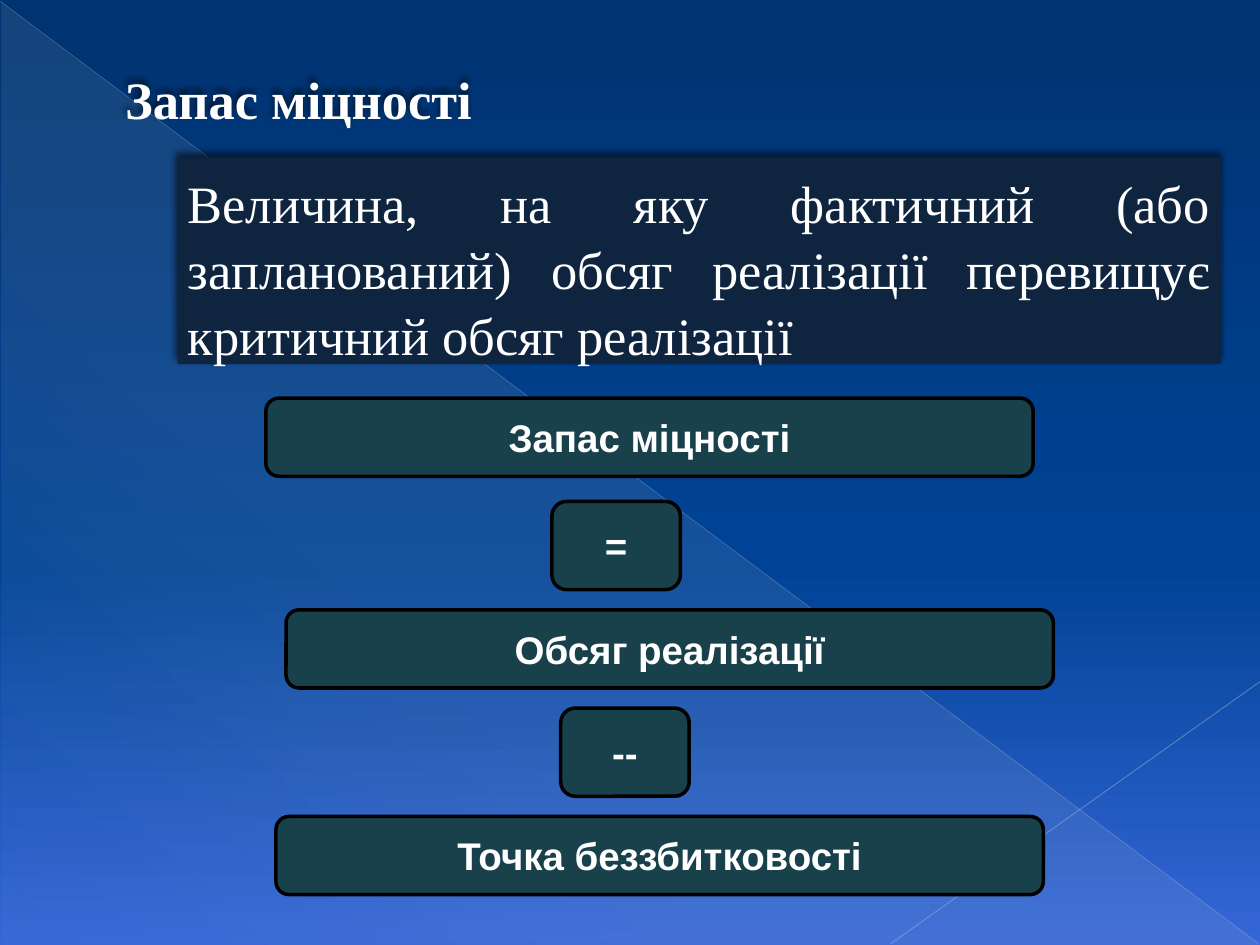
from lxml import etree
from pptx import Presentation
from pptx.dml.color import RGBColor
from pptx.enum.shapes import MSO_CONNECTOR, MSO_SHAPE
from pptx.enum.text import MSO_ANCHOR, PP_ALIGN
from pptx.oxml.ns import qn
from pptx.util import Inches, Pt

STRAIGHT = MSO_CONNECTOR.STRAIGHT
RECTANGLE = MSO_SHAPE.RECTANGLE
ROUNDED = MSO_SHAPE.ROUNDED_RECTANGLE
TRIANGLE = MSO_SHAPE.RIGHT_TRIANGLE
TOP, MIDDLE = MSO_ANCHOR.TOP, MSO_ANCHOR.MIDDLE
CENTER, JUSTIFY = PP_ALIGN.CENTER, PP_ALIGN.JUSTIFY

COLORS = {
    "sky_top": "003371",
    "sky_middle": "004396",
    "sky_bottom": "3566D7",
    "cream": "EEECE1",
    "long_line": "ADB6CE",
    "short_line": "B6BED3",
    "navy": "0F243E",
    "teal": "18414C",
    "black": "000000",
    "white": "FFFFFF",
}
SERIF = {"name": "Times New Roman", "size": Pt(30), "bold": False}
SERIF_BOLD = {**SERIF, "bold": True}
SANS_BOLD = {"name": "Arial", "size": Pt(22), "bold": True}


class SlideBuilder:
    """Holds the colours and the current slide, and draws each kind of element."""

    def __init__(self, slide, colors):
        self.slide = slide
        self.colors = colors

    def rgb(self, color):
        return RGBColor.from_string(self.colors[color])

    def add_color(self, parent, color, opacity):
        element = etree.SubElement(parent, qn("a:srgbClr"), val=self.colors[color])
        if opacity < 100:
            etree.SubElement(element, qn("a:alpha"), val=str(opacity * 1000))

    def gradient(self, fill, owner, stops, angle):
        fill.gradient()
        gradient = owner.find(".//" + qn("a:gradFill"))
        for child in list(gradient):
            gradient.remove(child)
        stop_list = etree.SubElement(gradient, qn("a:gsLst"))
        for position, color, opacity in stops:
            stop = etree.SubElement(stop_list, qn("a:gs"), pos=str(position * 1000))
            self.add_color(stop, color, opacity)
        etree.SubElement(gradient, qn("a:lin"), ang=str(angle * 60000), scaled="0")

    def background(self, stops, angle):
        self.gradient(self.slide.background.fill, self.slide.element, stops, angle)

    def shape(self, kind, box, fill=None, line=None):
        shape = self.slide.shapes.add_shape(kind, *map(Inches, box))
        shape.shadow.inherit = False
        if fill:
            shape.fill.solid()
            shape.fill.fore_color.rgb = self.rgb(fill)
        else:
            shape.fill.background()
        if line:
            shape.line.color.rgb = self.rgb(line)
            shape.line.width = Pt(2)
        else:
            shape.line.fill.background()
        return shape

    def triangle(self, box, stops, angle):
        shape = self.shape(TRIANGLE, box)
        self.gradient(shape.fill, shape.element, stops, angle)

    def line(self, start, end, color, width, opacity):
        points = map(Inches, (*start, *end))
        connector = self.slide.shapes.add_connector(STRAIGHT, *points)
        connector.line.width = Pt(width)
        connector.line.color.rgb = self.rgb(color)
        properties = connector.element.spPr
        element = properties.find(".//" + qn("a:srgbClr"))
        etree.SubElement(element, qn("a:alpha"), val=str(opacity * 1000))
        etree.SubElement(properties, qn("a:effectLst"))

    def shadow(self, shape):
        effects = shape.element.spPr.find(qn("a:effectLst"))
        shadow = etree.SubElement(
            effects, qn("a:outerShdw"), blurRad=str(Pt(4)), dist=str(Pt(3)),
            dir=str(245 * 60000), algn="tl", rotWithShape="0")
        self.add_color(shadow, "black", 60)

    def text(self, shape, text, font, alignment, anchor, margins=None, spacing=1.0):
        frame = shape.text_frame
        frame.word_wrap = True
        frame.vertical_anchor = anchor
        for name, value in (margins or {}).items():
            setattr(frame, "margin_" + name, Inches(value))
        paragraph = frame.paragraphs[0]
        paragraph.alignment = alignment
        paragraph.line_spacing = spacing
        run = paragraph.add_run()
        run.text = text
        for name, value in font.items():
            setattr(run.font, name, value)
        run.font.color.rgb = self.rgb("white")

    def title(self, text, box):
        shape = self.slide.shapes.add_textbox(*map(Inches, box))
        shape.shadow.inherit = False
        self.shadow(shape)
        margins = dict.fromkeys(("left", "top", "right", "bottom"), 0)
        self.text(shape, text, SERIF_BOLD, CENTER, TOP, margins)

    def definition(self, text, box):
        shape = self.shape(RECTANGLE, box, "navy")
        self.shadow(shape)
        margins = dict.fromkeys(("left", "top", "right", "bottom"), 0.08)
        self.text(shape, text, SERIF, JUSTIFY, TOP, margins, 1.05)

    def formula_box(self, text, box):
        shape = self.shape(ROUNDED, box, "teal", "black")
        self.text(shape, text, SANS_BOLD, CENTER, MIDDLE)


def main():
    presentation = Presentation()
    presentation.slide_width = Inches(10)
    presentation.slide_height = Inches(7.5)
    slide = presentation.slides.add_slide(presentation.slide_layouts[6])
    builder = SlideBuilder(slide, COLORS)

    builder.background(
        [(0, "sky_top", 100), (60, "sky_middle", 100), (100, "sky_bottom", 100)], 90)
    builder.triangle(
        (0.01, 0.02, 9.99, 7.48),
        [(0, "cream", 10), (70, "cream", 8), (100, "cream", 1)], 133)
    builder.line((0, 0.01), (9.99, 7.49), "long_line", 0.39, 35)
    builder.line((10, 5.41), (7.07, 7.49), "short_line", 0.47, 45)

    builder.title("Запас міцності", (0.72, 0.53, 3.3, 0.66))
    builder.definition(
        "Величина, на яку фактичний (або запланований) обсяг реалізації "
        "перевищує критичний обсяг реалізації",
        (1.41, 1.25, 8.28, 1.64))

    term_size, sign_size = (6.09, 0.62), (1.02, 0.7)
    formula = [
        ("Запас міцності", 2.11, 3.16, term_size),
        ("=", 4.38, 3.98, sign_size),
        ("Обсяг реалізації", 2.27, 4.84, term_size),
        ("--", 4.45, 5.62, sign_size),
        ("Точка беззбитковості", 2.19, 6.48, term_size),
    ]
    for text, left, top, size in formula:
        builder.formula_box(text, (left, top, *size))

    presentation.save("out.pptx")


if __name__ == "__main__":
    main()
